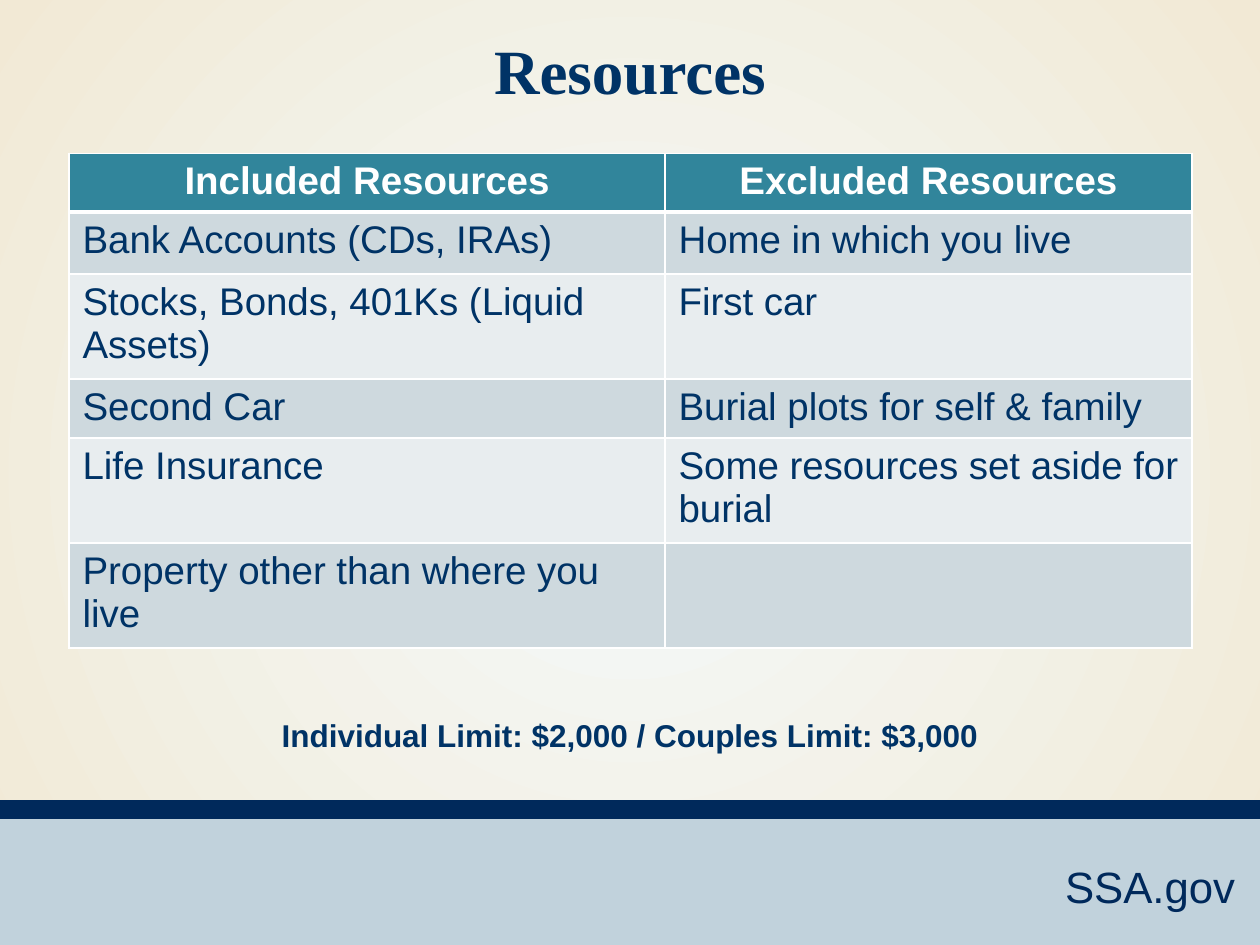
from dataclasses import dataclass

from pptx import Presentation
from pptx.dml.color import RGBColor as RGB
from pptx.enum.shapes import MSO_SHAPE as Shape
from pptx.enum.text import MSO_ANCHOR as Anchor, PP_ALIGN as Align
from pptx.oxml import parse_xml
from pptx.oxml.ns import nsdecls, qn
from pptx.util import Pt


@dataclass(frozen=True)
class Theme:
    ink: str = "003366"
    navy: str = "00295B"
    band: str = "C1D2DC"
    header: str = "31859B"
    white: str = "FFFFFF"
    stripes: tuple[str, str] = ("CED9DE", "E8EDEF")
    glow: tuple[str, str] = ("F3FAFB", "F2E9D5")
    serif: str = "Times New Roman"
    sans: str = "Arial"
    title_size: float = 36
    site_size: float = 25
    cell_size: float = 22
    limit_size: float = 18


@dataclass(frozen=True)
class Box:
    left: float
    top: float
    width: float
    height: float

    def emu(self) -> tuple:
        return tuple(Pt(v) for v in (self.left, self.top, self.width, self.height))


@dataclass(frozen=True)
class Bar:
    box: Box
    color: str


@dataclass(frozen=True)
class Style:
    size: float
    color: str
    bold: bool = False
    align: Align = Align.CENTER
    font: str = "Arial"


@dataclass(frozen=True)
class Label:
    box: Box
    text: str
    style: Style
    inset_top: float = 3.6


T = Theme()
SLIDE_W, SLIDE_H = 720, 540
BARS = [
    Bar(Box(0, 464, SLIDE_W, 76), T.band),
    Bar(Box(0, 457.2, SLIDE_W, 10.8), T.navy),
]
LABELS = [
    Label(Box(491.8, 485.3, 221, 37.4), "SSA.gov",
          Style(T.site_size, T.navy, align=Align.RIGHT, font=T.sans), 6),
    Label(Box(49.7, 10, 620.6, 46), "Resources",
          Style(T.title_size, T.ink, True, font=T.serif), 8),
    Label(Box(49.7, 405.4, 620.6, 25.2),
          "Individual Limit: $2,000 / Couples Limit: $3,000",
          Style(T.limit_size, T.ink, True, font=T.sans)),
]
TABLE_BOX = Box(39.5, 87.6, 641.6, 285.8)
COL_WIDTHS = [340.6, 301]
ROW_HEIGHTS = [31, 35.3, 36.7, 33.8, 35.3, 54.7]
ROWS = [
    ("Included Resources", "Excluded Resources"),
    ("Bank Accounts (CDs, IRAs)", "Home in which you live"),
    ("Stocks, Bonds, 401Ks (Liquid Assets)", "First car"),
    ("Second Car", "Burial plots for self & family"),
    ("Life Insurance", "Some resources set aside for burial"),
    ("Property other than where you live", ""),
]
HEAD_STYLE = Style(T.cell_size, T.white, True, font=T.sans)
BODY_STYLE = Style(T.cell_size, T.ink, align=Align.LEFT, font=T.sans)


def set_all(obj, values: dict) -> None:
    for name, value in values.items():
        setattr(obj, name, value)


def write(p, text: str, style: Style) -> None:
    p.alignment = style.align
    if not text:
        p.font.size = Pt(style.size)
        return
    r = p.add_run()
    r.text = text
    set_all(r.font, {"name": style.font, "size": Pt(style.size), "bold": style.bold})
    r.font.color.rgb = RGB.from_string(style.color)


def paint_background(s) -> None:
    fill = s.background.fill
    fill.gradient()
    for stop, position, color in zip(fill.gradient_stops, (0, 1), T.glow):
        stop.position = position
        stop.color.rgb = RGB.from_string(color)
    grad = next(s.element.iter(qn("a:gradFill")))
    grad.replace(grad.find(qn("a:lin")), parse_xml(
        f'<a:path {nsdecls("a")} path="circle">'
        '<a:fillToRect l="50000" t="50000" r="50000" b="50000"/></a:path>'))


def add_bar(s, bar: Bar) -> None:
    sp = s.shapes.add_shape(Shape.RECTANGLE, *bar.box.emu())
    sp.shadow.inherit = False
    sp.fill.solid()
    sp.fill.fore_color.rgb = RGB.from_string(bar.color)
    sp.line.fill.background()


def add_label(s, label: Label) -> None:
    tf = s.shapes.add_textbox(*label.box.emu()).text_frame
    set_all(tf, {"word_wrap": True, "vertical_anchor": Anchor.TOP,
                 "margin_top": Pt(label.inset_top)})
    write(tf.paragraphs[0], label.text, label.style)


def add_borders(cell, top: float, bottom: float) -> None:
    tc_pr = cell._tc.get_or_add_tcPr()
    for side, width in {"L": 1, "R": 1, "T": top, "B": bottom}.items():
        tc_pr.append(parse_xml(
            f'<a:ln{side} {nsdecls("a")} w="{Pt(width)}"><a:solidFill>'
            f'<a:srgbClr val="{T.white}"/></a:solidFill></a:ln{side}>'))


def add_resource_table(s) -> None:
    table = s.shapes.add_table(len(ROWS), len(COL_WIDTHS), *TABLE_BOX.emu()).table
    for col, width in zip(table.columns, COL_WIDTHS):
        col.width = Pt(width)
    for i, (row, height, texts) in enumerate(zip(table.rows, ROW_HEIGHTS, ROWS)):
        row.height = Pt(height)
        color = T.stripes[(i - 1) % 2] if i else T.header
        for cell, text in zip(row.cells, texts):
            set_all(cell, {"margin_left": Pt(7.7), "margin_right": Pt(7.7),
                           "margin_top": Pt(3.6), "margin_bottom": Pt(3.6)})
            add_borders(cell, 3 if i == 1 else 1, 1 if i else 3)
            cell.fill.solid()
            cell.fill.fore_color.rgb = RGB.from_string(color)
            write(cell.text_frame.paragraphs[0], text, BODY_STYLE if i else HEAD_STYLE)


def main() -> None:
    prs = Presentation()
    set_all(prs, {"slide_width": Pt(SLIDE_W), "slide_height": Pt(SLIDE_H)})
    s = prs.slides.add_slide(prs.slide_layouts[6])
    paint_background(s)
    for bar in BARS:
        add_bar(s, bar)
    for label in LABELS:
        add_label(s, label)
    add_resource_table(s)
    prs.save("out.pptx")


if __name__ == "__main__":
    main()
